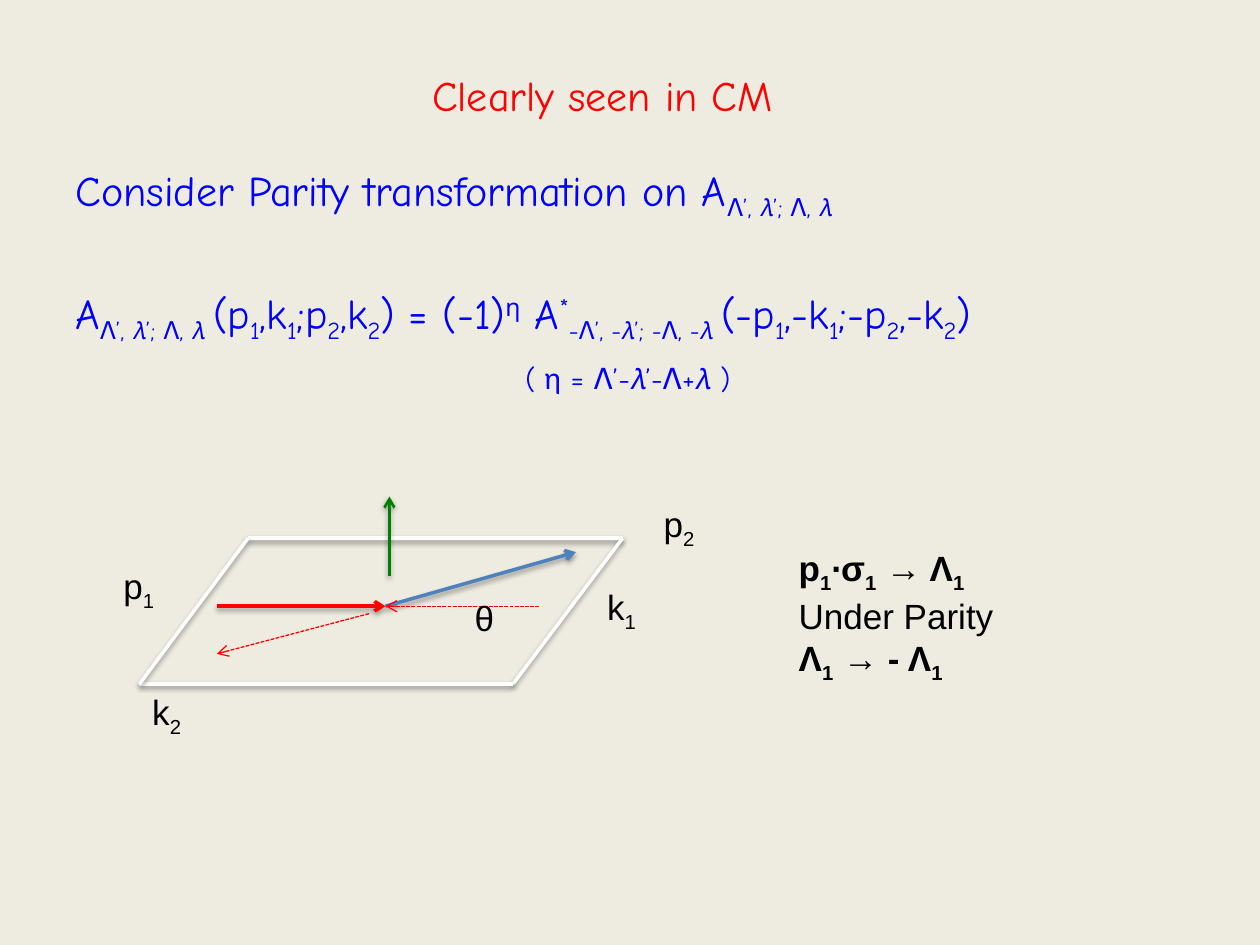
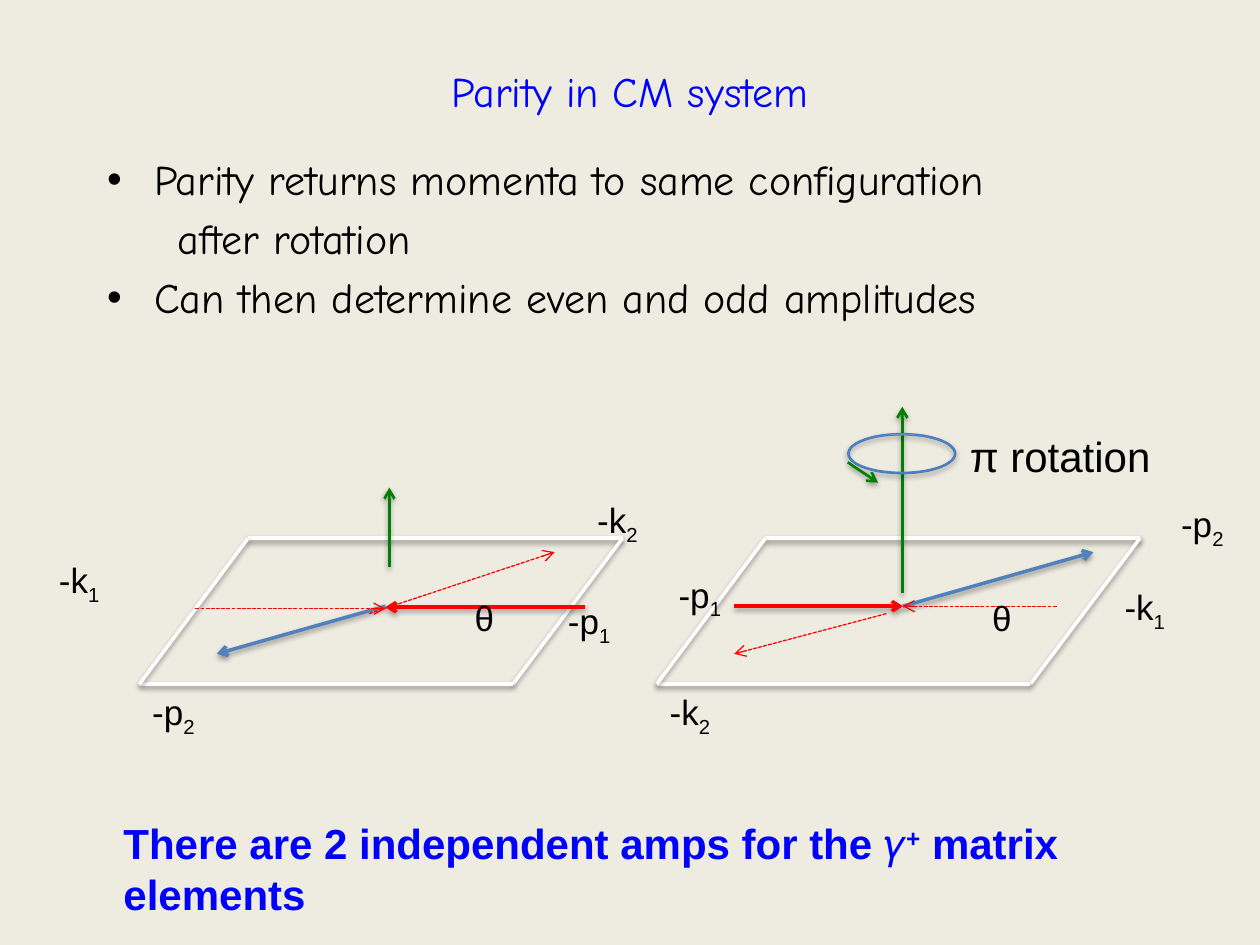
from typing import Iterator, NamedTuple, Optional

from lxml import etree
from pptx import Presentation
from pptx import util as u
from pptx.dml.color import RGBColor
from pptx.enum import dml, shapes, text
from pptx.oxml.ns import qn

PAPER, BLACK, WHITE = "EEECE1", "000000", "FFFFFF"
RED, BLUE, STEEL, GREEN = "FF0000", "0000FF", "4F81BD", "008000"
HAND, PLAIN = "Comic Neue", "Arial"
BASELINES = {"_": "-25000", "^": "30000"}
PLANE_SHIFT = 10.43


class Para(NamedTuple):
    markup: str
    before: float = 0
    indent: float = 0
    bullet: bool = False
    size: Optional[float] = None
    bold: Optional[bool] = None


class Line(NamedTuple):
    start: tuple[float, float]
    end: tuple[float, float]
    color: str
    width: float = 2
    dashed: bool = False
    arrow: bool = True


class Label(NamedTuple):
    markup: str
    left: float
    top: float


def beam(start: tuple[float, float], end: tuple[float, float]) -> Line:
    return Line(start, end, RED)


def scattered(start: tuple[float, float], end: tuple[float, float]) -> Line:
    return Line(start, end, STEEL)


def partner(start: tuple[float, float], end: tuple[float, float]) -> Line:
    return Line(start, end, RED, 0.75, dashed=True)


def spin(start: tuple[float, float], end: tuple[float, float]) -> Line:
    return Line(start, end, GREEN, 1.5)


CORNERS = [(5.0, 10.85), (12.55, 10.85), (10.34, 13.79), (2.81, 13.79)]
PLANE = [Line(start, end, WHITE, arrow=False)
         for start, end in zip(CORNERS, CORNERS[1:] + CORNERS[:1])]
FORWARD = [
    beam((4.37, 12.22), (7.77, 12.22)),
    scattered((7.77, 12.22), (11.61, 11.13)),
    partner((10.87, 12.22), (7.77, 12.22)),
    partner((7.44, 12.37), (4.37, 13.18)),
]
REVERSED = [
    beam((11.79, 12.24), (7.77, 12.24)),
    scattered((7.77, 12.22), (4.37, 13.18)),
    partner((3.94, 12.27), (7.77, 12.27)),
    partner((7.44, 12.37), (11.18, 11.13)),
]


def rgb(color: str) -> RGBColor:
    return RGBColor.from_string(color)


def split_markup(markup: str) -> Iterator[tuple[str, Optional[str]]]:
    """Yield text and baseline; _{...} is a subscript and ^{...} a superscript."""
    for piece in markup.split("}"):
        mark = "^" if "^{" in piece else "_"
        plain, _, shifted = piece.partition(mark + "{")
        yield plain, None
        yield shifted, BASELINES[mark]


def add_text(page, left: float, top: float, width: float, height: float,
             *paras: Para, font: str = PLAIN, size: float = 20,
             color: str = BLACK, bold: bool = False, wrap: bool = True,
             align=text.PP_ALIGN.LEFT, anchor=text.MSO_ANCHOR.TOP) -> None:
    box = page.shapes.add_textbox(u.Cm(left), u.Cm(top), u.Cm(width), u.Cm(height))
    frame = box.text_frame
    frame.word_wrap = wrap
    frame.vertical_anchor = anchor
    for index, item in enumerate(paras):
        para = frame.paragraphs[0] if index == 0 else frame.add_paragraph()
        para.alignment = align
        para.space_before = u.Pt(item.before)
        set_indent(para, item)
        for words, baseline in split_markup(item.markup):
            if not words:
                continue
            span = para.add_run()
            span.text = words
            span.font.name = font
            span.font.size = u.Pt(item.size or size)
            span.font.bold = bold if item.bold is None else item.bold
            span.font.color.rgb = rgb(color)
            if baseline:
                span.font._element.set("baseline", baseline)


def set_indent(para, item: Para) -> None:
    properties = para._p.get_or_add_pPr()
    properties.set("marL", str(u.Cm(item.indent)))
    properties.set("indent", str(u.Cm(-item.indent if item.bullet else 0)))
    if item.bullet:
        etree.SubElement(properties, qn("a:buFont"), typeface=PLAIN)
        etree.SubElement(properties, qn("a:buChar"), char="•")


def set_shadow(shape, visible: bool, alpha: int = 38, distance: float = 1.6) -> None:
    """Call after fill and line are set, as effects follow them."""
    effects = etree.SubElement(shape._element.spPr, qn("a:effectLst"))
    if visible:
        shadow = etree.SubElement(
            effects, qn("a:outerShdw"), blurRad=str(u.Pt(3.1)),
            dist=str(u.Pt(distance)), dir="5400000", rotWithShape="0")
        color = etree.SubElement(shadow, qn("a:srgbClr"), val=BLACK)
        etree.SubElement(color, qn("a:alpha"), val=str(alpha * 1000))


def add_line(page, line: Line, shift: float = 0) -> None:
    (x1, y1), (x2, y2) = line.start, line.end
    connector = page.shapes.add_connector(
        shapes.MSO_CONNECTOR.STRAIGHT,
        u.Cm(x1 + shift), u.Cm(y1), u.Cm(x2 + shift), u.Cm(y2))
    connector.line.color.rgb = rgb(line.color)
    connector.line.width = u.Pt(line.width)
    if line.dashed:
        connector.line.dash_style = dml.MSO_LINE.SQUARE_DOT
    if line.arrow:
        etree.SubElement(connector.line._get_or_add_ln(), qn("a:tailEnd"), type="arrow")
    set_shadow(connector, visible=not line.dashed)


def add_diagram(page, lines: list[Line], labels: list[Label], shift: float = 0) -> None:
    """Draw the scattering plane with its momenta, moved right by shift."""
    for line in PLANE + lines:
        add_line(page, line, shift)
    add_text(page, 9.32 + shift, 11.91, 1.02, 1.12, Para("θ"))
    for label in labels:
        width = 0.92 + 0.25 * len(label.markup.partition("_")[0])
        add_text(page, label.left + shift, label.top, width, 1.12,
                 Para(label.markup), wrap=False)


def add_rotation_ring(page) -> None:
    ring = page.shapes.add_shape(shapes.MSO_SHAPE.DONUT,
                                 u.Cm(17.09), u.Cm(8.74), u.Cm(2.18), u.Cm(0.81))
    ring.adjustments[0] = 0.034
    ring.fill.gradient()
    ring.fill.gradient_angle = 90
    for stop, color in zip(ring.fill.gradient_stops, ("3F80CE", "A4C4FF")):
        stop.color.rgb = rgb(color)
    ring.line.color.rgb = rgb("4B7EBC")
    ring.line.width = u.Pt(0.75)
    set_shadow(ring, visible=True, alpha=35, distance=1.8)


def add_page(deck):
    page = deck.slides.add_slide(deck.slide_layouts[6])
    page.background.fill.solid()
    page.background.fill.fore_color.rgb = rgb(PAPER)
    return page


def build_transformation(deck) -> None:
    page = add_page(deck)
    add_text(
        page, 1.27, 3.18, 22.86, 4.42,
        Para("Consider Parity transformation on A_{Λ’, 𝜆’; Λ, 𝜆}", before=5),
        Para("A_{Λ’, 𝜆’; Λ, 𝜆 }(p_{1},k_{1};p_{2},k_{2}) = (-1)^{η} A^{*}"
             "_{-Λ’, -𝜆’; -Λ, -𝜆 }(-p_{1},-k_{1};-p_{2},-k_{2})", before=37.5),
        Para("( η = Λ’-𝜆’-Λ+𝜆 )", before=9, indent=9.07, size=16.6),
        font=HAND, size=24.1, color=BLUE)
    add_diagram(page, FORWARD + [spin((7.85, 11.61), (7.85, 10.01))], [
        Label("p_{1}", 2.24, 11.25), Label("p_{2}", 13.13, 10.01),
        Label("k_{1}", 11.99, 11.68), Label("k_{2}", 2.82, 13.79)])
    add_text(page, 15.85, 10.9, 4.47, 5.38,
             Para("p_{1}∙σ_{1} → Λ_{1}"),
             Para("Under Parity", bold=False),
             Para("Λ_{1} → - Λ_{1}"), bold=True, wrap=False)
    add_text(page, 8.46, 1.27, 7.77, 1.27, Para("Clearly seen in CM"),
             font=HAND, size=24, color=RED, wrap=False)


def build_cm_system(deck) -> None:
    page = add_page(deck)
    add_text(page, 1.27, 0.64, 22.86, 2.39, Para("Parity in CM system"),
             font=HAND, size=24, color=BLUE,
             align=text.PP_ALIGN.CENTER, anchor=text.MSO_ANCHOR.MIDDLE)
    add_text(
        page, 1.91, 2.97, 22.86, 4.7,
        Para("Parity returns momenta to same configuration", 5, 0.95, bullet=True),
        Para("after rotation", 5, 1.42),
        Para("Can then determine even and odd amplitudes", 5, 0.95, bullet=True),
        font=HAND, size=24)
    add_diagram(page, REVERSED + [spin((7.85, 11.43), (7.85, 9.83))], [
        Label("-p_{1}", 11.2, 11.96), Label("-p_{2}", 2.82, 13.79),
        Label("-k_{1}", 0.94, 11.13), Label("-k_{2}", 11.79, 9.93)])
    add_diagram(page, FORWARD + [spin((7.76, 11.96), (7.76, 8.2))], [
        Label("-p_{1}", 3.0, 11.43), Label("-p_{2}", 13.13, 10.01),
        Label("-k_{1}", 11.99, 11.68), Label("-k_{2}", 2.82, 13.79)], PLANE_SHIFT)
    add_rotation_ring(page)
    add_text(page, 19.3, 8.56, 4.19, 1.27, Para("π rotation"), size=24, wrap=False)
    add_line(page, spin((17.09, 9.32), (17.7, 9.73)))
    add_text(page, 2.24, 16.36, 21.89, 1.27,
             Para("There are 2 independent amps for the 𝛾^{+} matrix elements"),
             size=24, color=BLUE, bold=True)


def main() -> None:
    deck = Presentation()
    deck.slide_width, deck.slide_height = u.Cm(25.4), u.Cm(19.05)
    build_transformation(deck)
    build_cm_system(deck)
    deck.save("out.pptx")


if __name__ == "__main__":
    main()
